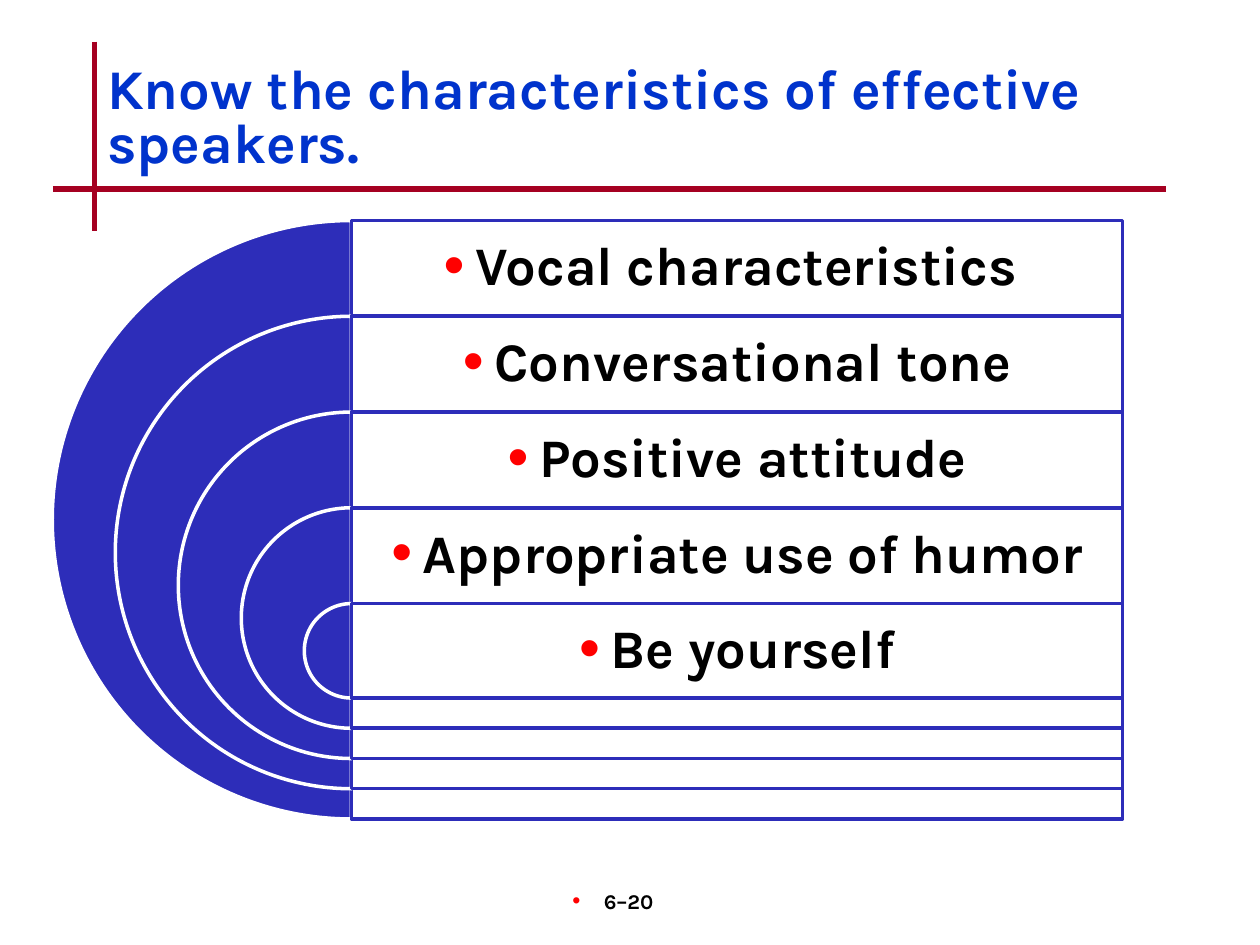
from lxml import etree
from pptx import Presentation
from pptx.dml.color import RGBColor
from pptx.enum.shapes import MSO_CONNECTOR, MSO_SHAPE
from pptx.enum.text import MSO_ANCHOR, MSO_AUTO_SIZE, PP_ALIGN
from pptx.oxml.ns import qn
from pptx.util import Inches, Pt

STRAIGHT = MSO_CONNECTOR.STRAIGHT
PIE, RECTANGLE = MSO_SHAPE.PIE, MSO_SHAPE.RECTANGLE
MIDDLE, TOP = MSO_ANCHOR.MIDDLE, MSO_ANCHOR.TOP
CENTER, LEFT = PP_ALIGN.CENTER, PP_ALIGN.LEFT
NO_AUTOFIT = MSO_AUTO_SIZE.NONE

RED_RULE = RGBColor(0xA5, 0x00, 0x21)
INDIGO = RGBColor(0x2D, 0x2D, 0xB9)
TITLE_BLUE = RGBColor(0x00, 0x33, 0xCC)
BULLET_RED = RGBColor(0xFF, 0x00, 0x00)
WHITE = RGBColor(0xFF, 0xFF, 0xFF)
BLACK = RGBColor(0x00, 0x00, 0x00)


def write_text(box, text, size, color=BLACK, align=CENTER, anchor=MIDDLE,
               spacing=1.0, bullet_size=None):
    """Fill a box with one bold paragraph, with a red bullet if it has a size."""
    frame = box.text_frame
    frame.word_wrap = True
    frame.auto_size = NO_AUTOFIT
    frame.vertical_anchor = anchor
    para = frame.paragraphs[0]
    para.alignment = align
    para.line_spacing = spacing
    if bullet_size:
        properties = para._p.get_or_add_pPr()
        properties.set("marL", str(Inches(0.25)))
        properties.set("indent", str(-Inches(0.25)))
        bullet_color = etree.SubElement(properties, qn("a:buClr"))
        etree.SubElement(bullet_color, qn("a:srgbClr"), val=str(BULLET_RED))
        etree.SubElement(properties, qn("a:buSzPct"), val=str(bullet_size * 1000))
        etree.SubElement(properties, qn("a:buFont"), typeface="Arial")
        etree.SubElement(properties, qn("a:buChar"), char="•")
    span = para.add_run()
    span.text = text
    span.font.name = "Karla"
    span.font.size = Pt(size)
    span.font.bold = True
    span.font.color.rgb = color


deck = Presentation()
deck.slide_width, deck.slide_height = Inches(10), Inches(7.5)
page = deck.slides.add_slide(deck.slide_layouts[5])
shapes = page.shapes

# Crossed rules beside and below the title
for x1, y1, x2, y2 in [(0.75, 0.33, 0.75, 1.83), (0.42, 1.5, 9.25, 1.5)]:
    rule = shapes.add_connector(STRAIGHT, Inches(x1), Inches(y1), Inches(x2), Inches(y2))
    rule.line.color.rgb = RED_RULE
    rule.line.width = Pt(3)
    etree.SubElement(rule._element.spPr, qn("a:effectLst"))

# Title
title = shapes.title
title.left, title.top = Inches(0.75), Inches(0.33)
title.width, title.height = Inches(8.5), Inches(1.25)
write_text(title, "Know the characteristics of effective speakers.", 32,
           color=TITLE_BLUE, align=LEFT, spacing=0.8)

# Nested half discs, each with a panel and a label
CHARACTERISTICS = ["Vocal characteristics ", "Conversational tone", "Positive attitude",
                   "Appropriate use of humor", "Be yourself"]
AXIS, PANEL_WIDTH, ROW = 2.79, 6.12, 0.76
for i, characteristic in enumerate(CHARACTERISTICS):
    top = Inches(1.75 + i * ROW)
    diameter = Inches(4.75 - i)
    disc = shapes.add_shape(PIE, Inches(AXIS) - diameter // 2, top, diameter, diameter)
    disc.adjustments[0], disc.adjustments[1] = 54, 162
    panel = shapes.add_shape(RECTANGLE, Inches(AXIS), top, Inches(PANEL_WIDTH), diameter)
    for shape, fill, line in [(disc, INDIGO, WHITE), (panel, WHITE, INDIGO)]:
        shape.shadow.inherit = False
        shape.fill.solid()
        shape.fill.fore_color.rgb = fill
        shape.line.color.rgb = line
        shape.line.width = Pt(2)
    panel_color = panel._element.spPr.find(qn("a:solidFill"))[0]
    etree.SubElement(panel_color, qn("a:alpha"), val="90000")

    label = shapes.add_textbox(Inches(AXIS), top, Inches(PANEL_WIDTH), Inches(ROW))
    frame = label.text_frame
    frame.margin_left = frame.margin_right = Inches(0.13)
    frame.margin_top = frame.margin_bottom = Inches(0.13)
    write_text(label, characteristic, 31, spacing=0.9, bullet_size=110)

# Page number
number = shapes.add_textbox(Inches(3.92), Inches(7), Inches(2.08), Inches(0.5))
number.text_frame.margin_right = Inches(0.29)
write_text(number, "6–20", 12, anchor=TOP, bullet_size=110)

deck.save("out.pptx")
